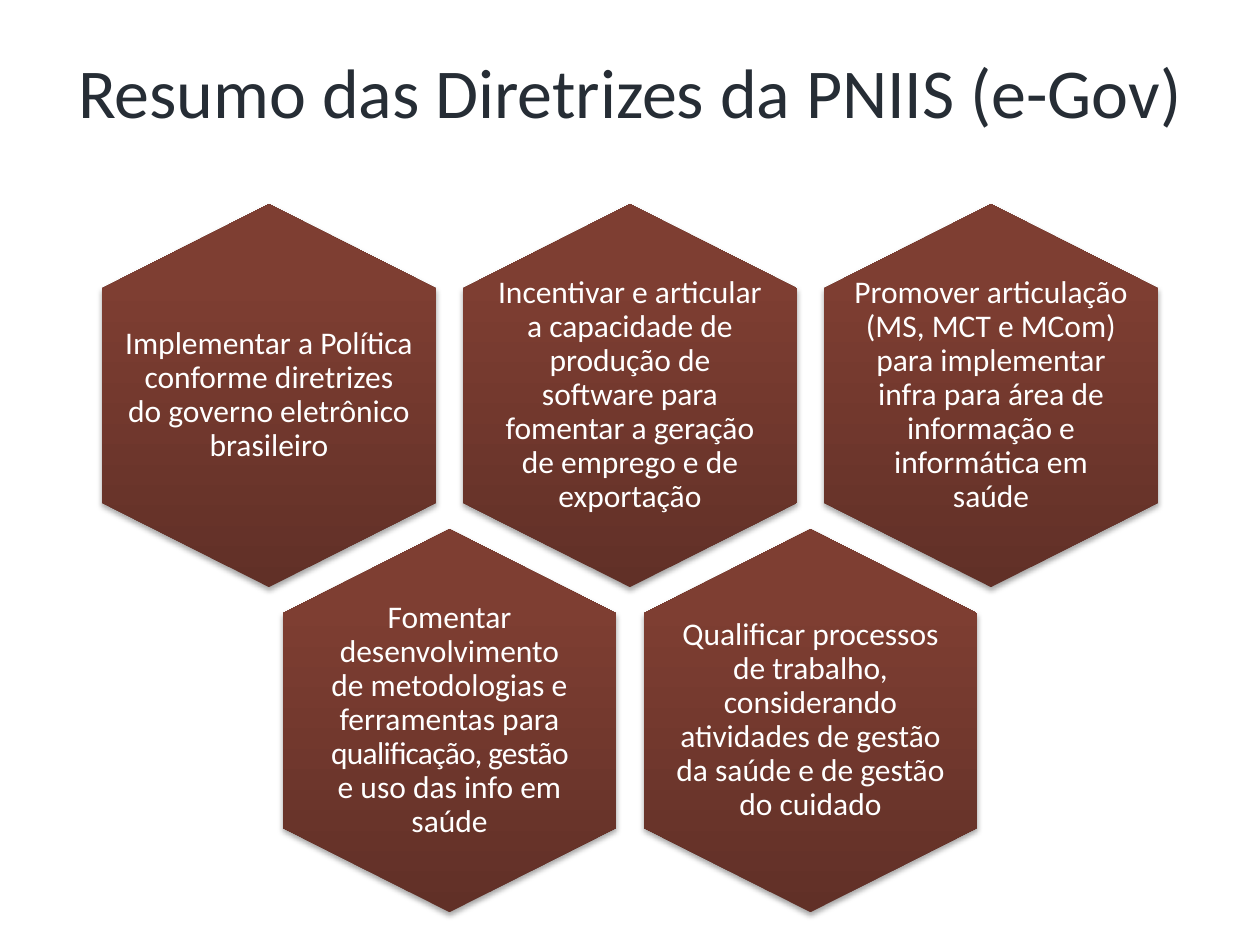
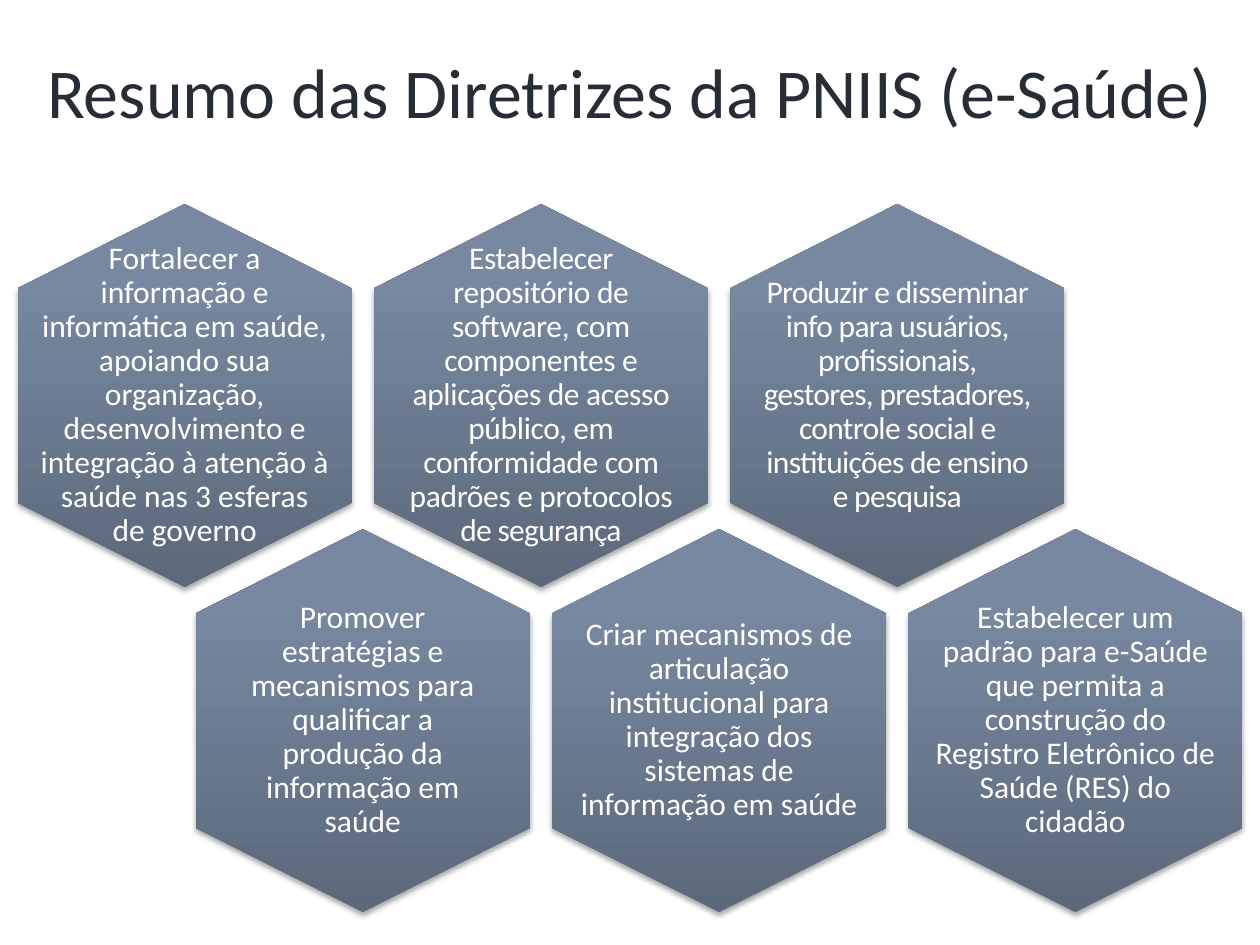
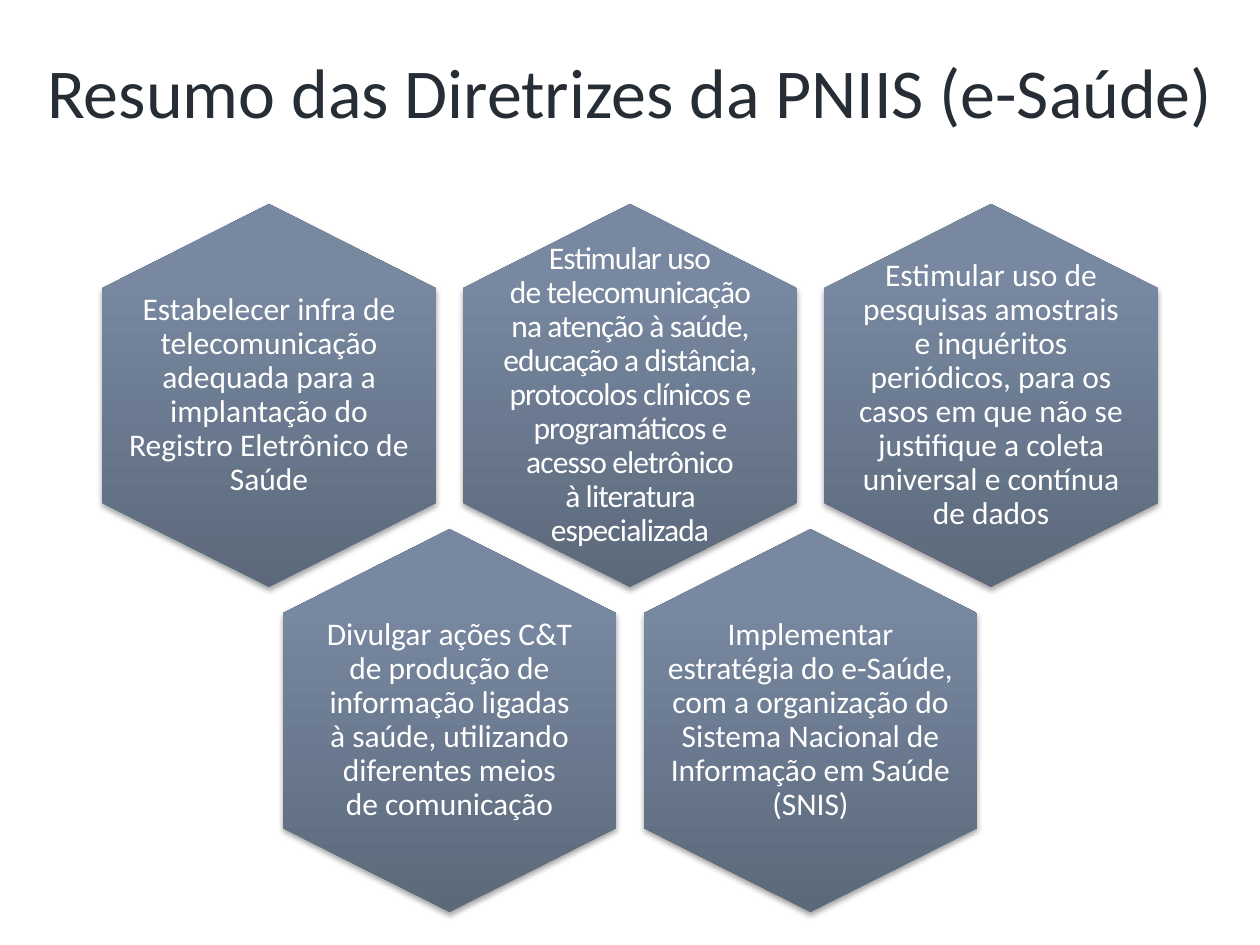
from lxml import etree
from pptx import Presentation
from pptx.dml.color import RGBColor
from pptx.enum.text import MSO_ANCHOR, PP_ALIGN
from pptx.oxml.ns import qn
from pptx.util import Inches, Pt

MIDDLE = MSO_ANCHOR.MIDDLE
CENTER = PP_ALIGN.CENTER
FONT = "Calibri"
INK = RGBColor(0x26, 0x2D, 0x35)
WHITE = RGBColor(0xFF, 0xFF, 0xFF)
RUST = (RGBColor(0x61, 0x30, 0x27), RGBColor(0x7E, 0x3E, 0x32))
SLATE = (RGBColor(0x5C, 0x69, 0x7B), RGBColor(0x77, 0x88, 0xA0))

WIDE, HIGH = 10, 7.5
HEAD = (0, 0, WIDE, 1.43)
TILE_W, TILE_H = 2.65, 3.04
TOP, ROW = 1.62, 2.58
HEXAGON = [(0.5, 0), (1, 0.22), (1, 0.78), (0.5, 1), (0, 0.78), (0, 0.22)]
INSETS = [0.18, 0.33, 0.24, 0.18, 0.24, 0.18]

GOV = [
    [("Implementar a Política conforme diretrizes do governo eletrônico brasileiro", 0)],
    [("Fomentar desenvolvimento de metodologias e ferramentas para ", 0),
     ("qualificação, gestão ", -0.4), ("e uso das info em saúde", 0)],
    [("Incentivar e articular a capacidade de produção de software para "
      "fomentar a geração de emprego e de exportação", 0)],
    [("Qualificar processos de trabalho, considerando atividades de gestão "
      "da saúde e de gestão do cuidado", 0)],
    [("Promover articulação (MS, MCT e MCom) para implementar infra para "
      "área de informação e informática em saúde", 0)],
]
HEALTH = [
    [("Fortalecer a informação e informática em saúde, apoiando sua "
      "organização, desenvolvimento e integração à atenção à saúde nas "
      "3 esferas\nde governo", 0)],
    [("Promover estratégias e mecanismos para qualificar a produção da "
      "informação em saúde", 0)],
    [("Estabelecer repositório de software, com componentes e aplicações de "
      "acesso público, em conformidade com padrões e protocolos ", -0.2),
     ("de segurança", -0.4)],
    [("Criar mecanismos de articulação institucional para integração dos "
      "sistemas de informação em saúde", 0)],
    [("Produzir e disseminar info para usuários, profissionais, gestores, "
      "prestadores, controle social e instituições de ensino e pesquisa", -0.4)],
    [("Estabelecer um padrão para e-Saúde que permita a construção do "
      "Registro Eletrônico de Saúde (RES) do cidadão", 0)],
]
ACCESS = [
    [("Estabelecer infra de telecomunicação adequada para a implantação do "
      "Registro Eletrônico de Saúde", 0)],
    [("Divulgar ações C&T de produção de informação ligadas à saúde, "
      "utilizando diferentes meios\nde comunicação", 0)],
    [("Estimular uso\nde telecomunicação na atenção à saúde, educação a "
      "distância, protocolos clínicos e programáticos e acesso eletrônico\n"
      "à literatura especializada", -0.5)],
    [("Implementar estratégia do e-Saúde, com a organização do Sistema "
      "Nacional de Informação em Saúde (SNIS)", 0)],
    [("Estimular uso de pesquisas amostrais e inquéritos periódicos, para os "
      "casos em que não se justifique a coleta universal e contínua de dados", 0)],
]
PAGES = [
    ("Resumo das Diretrizes da PNIIS (e-Gov)", RUST, 0.81, GOV),
    ("Resumo das Diretrizes da PNIIS (e-Saúde)", SLATE, 0.14, HEALTH),
    ("Resumo das Diretrizes da PNIIS (e-Saúde)", SLATE, 0.81, ACCESS),
]


def write(shape, parts, size, color):
    frame = shape.text_frame
    frame.word_wrap = True
    frame.vertical_anchor = MIDDLE
    para = frame.paragraphs[0]
    para.alignment = CENTER
    para.font.name = FONT
    para.font.size = Pt(size)
    para.font.color.rgb = color
    for text, gap in parts:
        for index, line in enumerate(text.split("\n")):
            if index:
                para.add_line_break()
            run = para.add_run()
            run.text = line
            if gap:
                run._r.get_or_add_rPr().set("spc", str(round(gap * 100)))
    return frame, para


def shade(shape):
    shape.shadow.inherit = False
    effects = shape._element.spPr.find(qn("a:effectLst"))
    outer = etree.SubElement(effects, qn("a:outerShdw"), blurRad=str(Pt(3.1)),
                             dist=str(Pt(1.8)), dir="5400000", rotWithShape="0")
    black = etree.SubElement(outer, qn("a:srgbClr"), val="000000")
    etree.SubElement(black, qn("a:alpha"), val="35000")


def add_title(slide, box, text):
    shape = slide.shapes.add_textbox(*map(Inches, box))
    write(shape, [(text, 0)], 40, INK)


def add_tile(slide, box, parts, tones, inset):
    left, top, width, height = box
    points = [(Inches(left + x * width), Inches(top + y * height)) for x, y in HEXAGON]
    outline = slide.shapes.build_freeform(*points[0])
    outline.add_line_segments(points[1:], close=True)
    shape = outline.convert_to_shape()
    shape.fill.gradient()
    shape.fill.gradient_angle = 90
    for stop, tone, place in zip(shape.fill.gradient_stops, tones, (0, 0.8)):
        stop.color.rgb = tone
        stop.position = place
    shape.line.fill.background()
    shade(shape)
    frame, para = write(shape, parts, 18, WHITE)
    para.line_spacing = 0.9
    frame.margin_left = frame.margin_right = Inches(inset)
    frame.margin_top = frame.margin_bottom = Inches(inset * 1.1)


def add_comb(slide, margin, tiles, tones):
    step = (WIDE - 2 * margin - TILE_W) / (len(tiles) - 1)
    for index, (parts, inset) in enumerate(zip(tiles, INSETS)):
        box = (margin + index * step, TOP + index % 2 * ROW, TILE_W, TILE_H)
        add_tile(slide, box, parts, tones, inset)


def main():
    deck = Presentation()
    deck.slide_width, deck.slide_height = Inches(WIDE), Inches(HIGH)
    for title, tones, margin, tiles in PAGES:
        slide = deck.slides.add_slide(deck.slide_layouts[6])
        add_title(slide, HEAD, title)
        add_comb(slide, margin, tiles, tones)
    deck.save("out.pptx")


if __name__ == "__main__":
    main()
